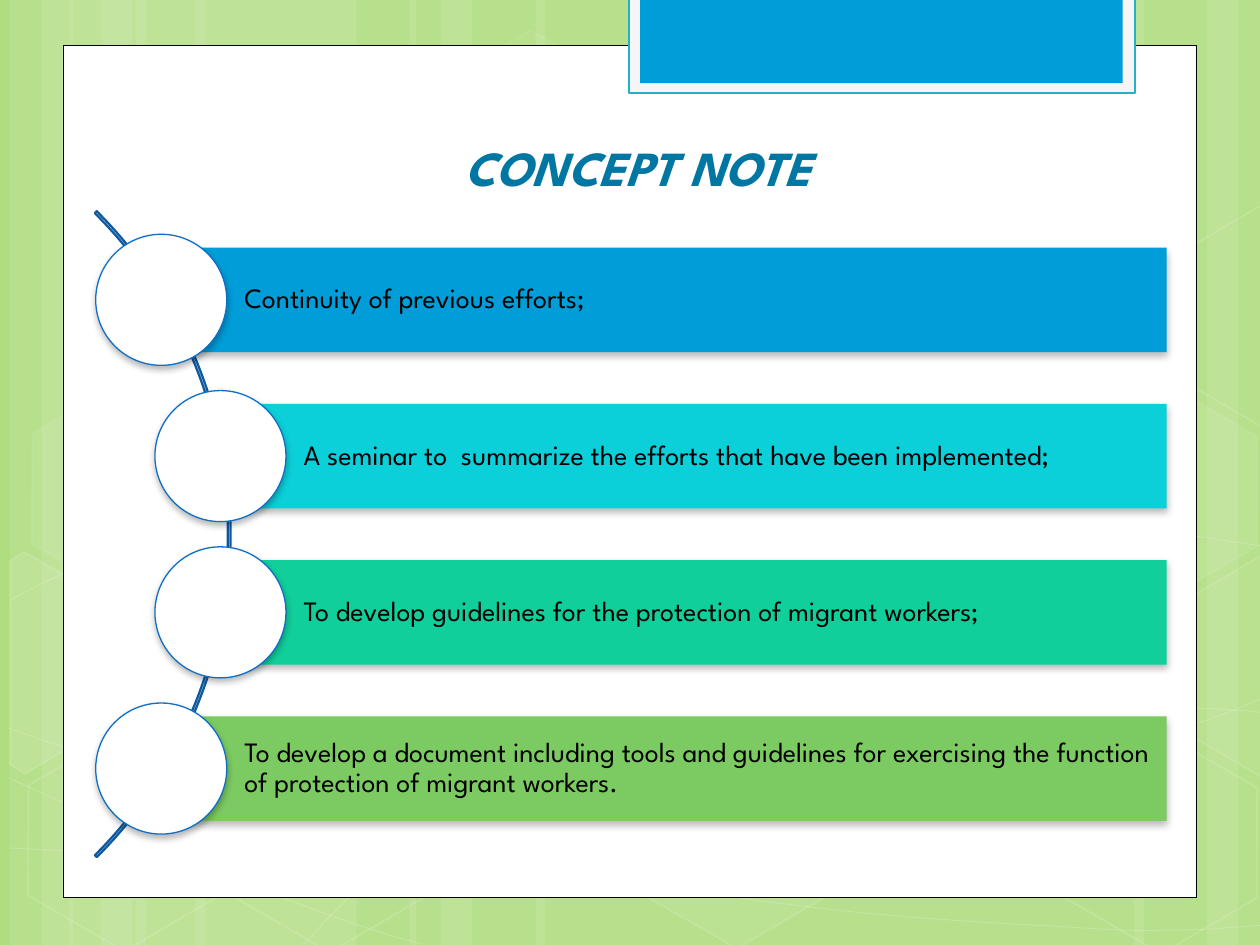
from lxml.etree import SubElement
from pptx import Presentation
from pptx.dml.color import RGBColor
from pptx.enum.shapes import MSO_SHAPE as Preset
from pptx.enum.text import MSO_ANCHOR as Anchor, PP_ALIGN as Align
from pptx.oxml.ns import qn
from pptx.util import Inches, Pt

FONT = "League Spartan"
COLORS = {
    "backdrop": "AFDD7F", "white": "FFFFFF", "black": "000000",
    "tab": "F5F5F5", "tab_edge": "21B2C9", "blue": "009DD9",
    "title": "0076A3", "arc": "0C599F", "ring": "0F6FC6",
    "cyan": "0BD0D9", "teal": "10CF9B", "green": "7CCA62",
}
STRIPES = [
    (1.08, 1.75), (0.08, 0.5), (0.33, 0.83), (1.55, 1.75), (0.55, 0.5), (0.8, 0.83),
    (7.33, 1.75), (9.58, 0.5), (9, 0.83), (4.25, 3.08), (3.25, 0.5), (3.5, 0.83),
]
CURVES = [
    ("CCCC", [
        (0.07, 6.73), (0.61, 6.76), (1.15, 6.79), (1.9, 6.78), (2.65, 6.77), (3.58, 6.75),
        (4.58, 6.65), (5.58, 6.55), (7, 6.36), (7.92, 6.17), (8.83, 5.98), (9.77, 5.68),
        (10.07, 5.51)]),
    ("CCCC", [
        (0.07, 4.77), (0.36, 4.61), (0.65, 4.46), (1.21, 4.31), (1.78, 4.16), (2.59, 3.94),
        (3.47, 3.87), (4.36, 3.8), (5.44, 3.79), (6.54, 3.87), (7.64, 3.95), (9.47, 4.26),
        (10.07, 4.34)]),
    ("C", [(0.06, 6.17), (1.27, 6.72), (2.47, 7.27), (3.34, 7.49)]),
    ("CCCCCC", [
        (0.07, 5.78), (0.38, 5.89), (0.7, 6), (1.28, 6.16), (1.86, 6.31), (2.73, 6.56),
        (3.57, 6.73), (4.4, 6.9), (5.45, 7.08), (6.28, 7.18), (7.11, 7.29), (8, 7.33),
        (8.53, 7.36), (9.05, 7.4), (9.19, 7.38), (9.45, 7.38), (9.71, 7.37), (9.89, 7.35),
        (10.07, 7.34)]),
    ("CCCCCCCLCC", [
        (2.42, 7.49), (2.6, 7.29), (2.78, 7.09), (3.02, 6.91), (3.26, 6.73), (3.6, 6.53),
        (3.88, 6.39), (4.16, 6.25), (4.33, 6.19), (4.7, 6.09), (5.06, 5.99), (5.73, 5.85),
        (6.08, 5.78), (6.44, 5.71), (6.49, 5.71), (6.8, 5.69), (7.11, 5.66), (7.6, 5.63),
        (7.94, 5.62), (8.29, 5.61), (8.86, 5.62), (8.86, 5.62), (9.53, 5.62), (9.71, 5.63),
        (9.88, 5.64), (9.97, 5.65), (10.06, 5.66), (10.03, 5.65), (10.06, 5.66)]),
]
HEXAGONS = [
    (3.34, 0.36, 4, 8), (4.97, 5.89, 6, 12), (0.11, 5.91, None, 12),
    (0.14, 3.12, 7, 8), (1.74, 5.92, None, 12), (7.53, 4.53, 10, 12),
    (8.34, 5.93, None, 12), (8.34, 3.14, 7, 8),
]
CUT_HEXAGONS = [
    ([(0.08, 4.45), (0.19, 4.38), (0.96, 4.82), (0.95, 5.7), (0.2, 6.14), (0.08, 6.07)], 10),
    ([(9.26, 4.85), (10.01, 4.41), (10.09, 4.46), (10.09, 6.13), (10.02, 6.17), (9.26, 5.73)], 4),
    ([(9.26, 2.07), (10.01, 1.63), (10.1, 1.68), (10.09, 3.35), (10.02, 3.39), (9.26, 2.95)], None),
]
ITEMS = [
    ("Continuity of previous efforts;", "blue", 0),
    ("A seminar to  summarize the efforts that have been implemented;", "cyan", 0.47),
    ("To develop guidelines for the protection of migrant workers;", "teal", 0.47),
    ("To develop a document including tools and guidelines for exercising the function "
     "of protection of migrant workers.", "green", 0),
]


def rgb(name):
    return RGBColor.from_string(COLORS[name])


def fade(parent, percent):
    color = parent.find(qn("a:solidFill")).find(qn("a:srgbClr"))
    SubElement(color, qn("a:alpha"), val=str(percent * 1000))


def paint(shape, fill=None, line=None, width=1, fill_alpha=None, line_alpha=None):
    shape.shadow.inherit = False
    properties = shape._element.spPr
    if fill:
        shape.fill.solid()
        shape.fill.fore_color.rgb = rgb(fill)
        if fill_alpha:
            fade(properties, fill_alpha)
    else:
        shape.fill.background()
    if line:
        shape.line.color.rgb = rgb(line)
        shape.line.width = Pt(width)
        if line_alpha:
            fade(properties.find(qn("a:ln")), line_alpha)
    else:
        shape.line.fill.background()
    return shape


def add_preset(page, preset, box, **style):
    shape = page.shapes.add_shape(preset, *[Inches(value) for value in box])
    return paint(shape, **style)


def add_outline(page, points, close, **style):
    points = [(Inches(x), Inches(y)) for x, y in points]
    builder = page.shapes.build_freeform(*points[0])
    builder.add_line_segments(points[1:], close=close)
    return paint(builder.convert_to_shape(), **style)


def bend(shape, segments):
    outline = next(shape._element.iter(qn("a:path")))
    corners = iter(outline.findall(qn("a:lnTo")))
    for kind in segments:
        if kind == "L":
            outline.append(next(corners))
            continue
        curve = SubElement(outline, qn("a:cubicBezTo"))
        for _ in range(3):
            corner = next(corners)
            curve.append(corner[0])
            outline.remove(corner)


def cast_shadow(shape):
    effects = shape._element.spPr.find(qn("a:effectLst"))
    shadow = SubElement(effects, qn("a:outerShdw"), blurRad=str(Pt(4)), dist=str(Pt(2)),
                        dir="5400000", algn="ctr", rotWithShape="0")
    color = SubElement(shadow, qn("a:srgbClr"), val=COLORS["black"])
    SubElement(color, qn("a:alpha"), val="28000")


def write(shape, text, size=16, color="black", bold=False, italic=False,
          align=Align.LEFT, anchor=Anchor.MIDDLE, spacing=None, insets=None):
    frame = shape.text_frame
    frame.word_wrap = True
    frame.vertical_anchor = anchor
    if insets:
        (frame.margin_left, frame.margin_top,
         frame.margin_right, frame.margin_bottom) = [Inches(value) for value in insets]
    para = frame.paragraphs[0]
    para.alignment = align
    para.line_spacing = spacing
    span = para.add_run()
    span.text = text
    span.font.name = FONT
    span.font.size = Pt(size)
    span.font.bold = bold
    span.font.italic = italic
    span.font.color.rgb = rgb(color)


def draw_backdrop(page, box):
    left, top, width, height = box
    page.background.fill.solid()
    page.background.fill.fore_color.rgb = rgb("backdrop")
    for x, stripe_width in STRIPES:
        add_preset(page, Preset.RECTANGLE, (left + x, top, stripe_width, height),
                   fill="white", fill_alpha=10)
    for segments, points in CURVES:
        curve = add_outline(page, [(left + x, top + y) for x, y in points], False,
                            line="white", width=0.5, line_alpha=20)
        bend(curve, segments)
    for x, y, fill_alpha, line_alpha in HEXAGONS:
        hexagon = add_preset(page, Preset.HEXAGON, (left + x, top + y, 1.75, 1.52),
                             fill="white" if fill_alpha else None, fill_alpha=fill_alpha,
                             line="white", line_alpha=line_alpha)
        hexagon.adjustments[0] = 0.285
        hexagon.rotation = 30
    for corners, fill_alpha in CUT_HEXAGONS:
        add_outline(page, [(left + x, top + y) for x, y in corners], True,
                    fill="white" if fill_alpha else None, fill_alpha=fill_alpha,
                    line="white", line_alpha=12)


def draw_card(page, box):
    left, top, width, height = box
    add_preset(page, Preset.RECTANGLE, box, fill="white", line="black", width=0.5)
    add_preset(page, Preset.RECTANGLE, (left + 4.49, top - 0.38, 4.02, 0.76),
               fill="tab", line="tab_edge", width=1.25)
    add_preset(page, Preset.RECTANGLE, (left + 4.58, top - 0.38, 3.83, 0.68), fill="blue")


def place_title(page, box):
    title = page.shapes.title
    title.left, title.top, title.width, title.height = [Inches(value) for value in box]
    write(title, "CONCEPT NOTE", size=28, color="title", bold=True, italic=True,
          align=Align.CENTER, anchor=Anchor.BOTTOM)
    page.shapes._spTree.append(title._element)


def draw_list(page, box):
    left, top, width, height = box
    middle = top + height / 2
    arc_size, pitch, bar_height, circle = 7.25, 1.24, 0.83, 1.04
    arc = add_preset(page, Preset.BLOCK_ARC,
                     (left + 1.07 - arc_size, middle - arc_size / 2, arc_size, arc_size),
                     line="arc", width=1.25)
    for index, value in enumerate((189, 27, 0.003)):
        arc.adjustments[index] = value
    for index, (text, color, indent) in enumerate(ITEMS):
        center = middle + (index - (len(ITEMS) - 1) / 2) * pitch
        bar_indent = indent + circle / 2
        bar = add_preset(page, Preset.RECTANGLE,
                         (left + bar_indent, center - bar_height / 2,
                          width - bar_indent, bar_height), fill=color)
        cast_shadow(bar)
        write(bar, text, spacing=0.9, insets=(0.66, 0.04, 0.04, 0.04))
        dot = add_preset(page, Preset.OVAL,
                         (left + indent, center - circle / 2, circle, circle),
                         fill="white", line="ring", width=0.75)
        cast_shadow(dot)


deck = Presentation()
deck.slide_width, deck.slide_height = Inches(10), Inches(7.5)
page = deck.slides.add_slide(deck.slide_layouts[5])
draw_backdrop(page, (0, 0, 10, 7.5))
draw_card(page, (0.5, 0.36, 9, 6.76))
place_title(page, (1.22, 1.04, 7.68, 0.57))
draw_list(page, (0.76, 1.68, 8.5, 5.12))
deck.save("out.pptx")
